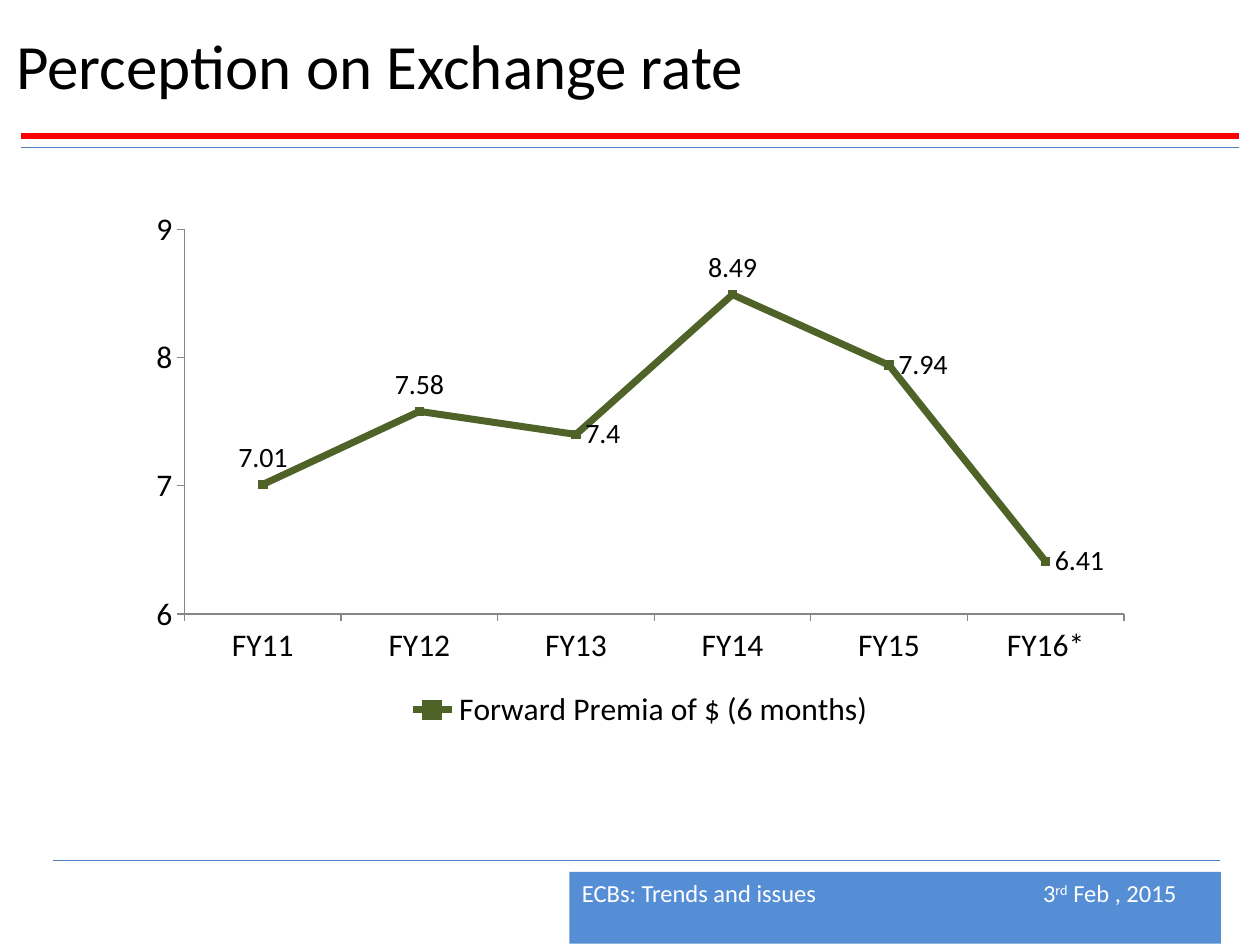
from typing import NamedTuple

from lxml.etree import SubElement
from pptx import Presentation
from pptx.chart.data import CategoryChartData
from pptx.dml.color import RGBColor
from pptx.enum.chart import (XL_CHART_TYPE, XL_LABEL_POSITION,
                             XL_LEGEND_POSITION, XL_MARKER_STYLE, XL_TICK_MARK)
from pptx.enum.shapes import MSO_CONNECTOR, MSO_SHAPE
from pptx.enum.text import MSO_ANCHOR, PP_ALIGN
from pptx.oxml.ns import qn
from pptx.util import Inches, Pt

WIDE, HIGH = Inches(10), Inches(7.5)
FACE = "Calibri"
GREEN, BLACK, WHITE, GREY = "4F6228", "000000", "FFFFFF", "868686"


class Rule(NamedTuple):
    """A level line, in percent of the slide's width and height."""
    left: float
    right: float
    top: float
    color: str
    weight: float


RULES = [
    Rule(1.7, 98.3, 14.4, "FF0000", 3),
    Rule(1.7, 98.3, 15.6, "4B7EBC", 0.75),
    Rule(4.2, 96.8, 91.07, "4B7EBC", 0.75),
]
RATES = {"FY11": 7.01, "FY12": 7.58, "FY13": 7.4,
         "FY14": 8.49, "FY15": 7.94, "FY16*": 6.41}
RAISED = (0, 1, 3)


def paint(color: str) -> RGBColor:
    """Turn a hex string into a colour."""
    return RGBColor.from_string(color)


def place(left: float, top: float, width: float, height: float) -> tuple:
    """Turn percent of the slide into a box of lengths."""
    return tuple(int(part * side / 100) for part, side in
                 zip((left, top, width, height), (WIDE, HIGH) * 2))


def style(font, size: float, color: str = BLACK) -> None:
    """Set the face, size and colour of a font."""
    font.name, font.size = FACE, Pt(size)
    font.color.rgb = paint(color)


def stroke(line, color: str, weight: float) -> None:
    """Set the colour and weight of a line."""
    line.color.rgb = paint(color)
    line.width = Pt(weight)


def add_rule(slide, rule: Rule) -> None:
    """Draw one level line."""
    x, y, end, base = place(rule.left, rule.top, rule.right, rule.top)
    line = slide.shapes.add_connector(MSO_CONNECTOR.STRAIGHT, x, y, end, base)
    stroke(line.line, rule.color, rule.weight)
    SubElement(line._element.spPr, qn("a:effectLst"))


def set_title(slide, text: str) -> None:
    """Place and format the title."""
    title = slide.shapes.title
    title.left, title.top, title.width, title.height = place(0.3, 0.4, 99.7, 12.9)
    stroke(title.line, WHITE, 0.75)
    title.text_frame.text = text
    title.text_frame.vertical_anchor = MSO_ANCHOR.MIDDLE
    para = title.text_frame.paragraphs[0]
    para.alignment = PP_ALIGN.LEFT
    style(para.font, 36)


def add_footer(slide) -> None:
    """Draw the footer band with its topic and date."""
    band = slide.shapes.add_shape(MSO_SHAPE.RECTANGLE, *place(45.2, 92.27, 51.7, 7.6))
    band.shadow.inherit = False
    band.fill.solid()
    band.fill.fore_color.rgb = paint("558ED5")
    band.line.fill.background()
    frame = band.text_frame
    frame.word_wrap = True
    frame.vertical_anchor = MSO_ANCHOR.TOP
    para = frame.paragraphs[0]
    para.alignment = PP_ALIGN.LEFT
    tabs = SubElement(para._p.get_or_add_pPr(), qn("a:tabLst"))
    SubElement(tabs, qn("a:tab"), pos=str(Inches(3.66)), algn="l")
    style(para.font, 14, WHITE)
    for text in ("ECBs: Trends and issues\t3", "rd", " Feb , 2015"):
        run = para.add_run()
        run.text = text
        if text == "rd":
            run.font._element.set("baseline", "30000")


def add_rates(slide) -> None:
    """Draw the line chart of forward premia."""
    data = CategoryChartData()
    data.categories = list(RATES)
    data.add_series("Forward Premia of $ (6 months)", list(RATES.values()))
    chart = slide.shapes.add_chart(
        XL_CHART_TYPE.LINE_MARKERS, *place(10.8, 21.1, 80, 56.7), data).chart
    style(chart.font, 18)
    chart.has_title = False
    chart.has_legend = True
    chart.legend.position = XL_LEGEND_POSITION.BOTTOM
    chart.legend.include_in_layout = False
    scale = chart.value_axis
    scale.minimum_scale, scale.maximum_scale, scale.major_unit = 6, 9, 1
    scale.has_major_gridlines = False
    for axis in (scale, chart.category_axis):
        axis.major_tick_mark = XL_TICK_MARK.OUTSIDE
        stroke(axis.format.line, GREY, 0.75)
    plot = chart.plots[0]
    plot.vary_by_categories = False
    series = plot.series[0]
    series.smooth = False
    stroke(series.format.line, GREEN, 4)
    mark = series.marker
    mark.style, mark.size = XL_MARKER_STYLE.SQUARE, 5
    mark.format.fill.solid()
    mark.format.fill.fore_color.rgb = paint(GREEN)
    stroke(mark.format.line, GREEN, 0.75)
    labels = series.data_labels
    labels.show_value = True
    labels.position = XL_LABEL_POSITION.RIGHT
    style(labels.font, 16)
    for index in RAISED:
        label = series.points[index].data_label
        style(label.font, 16)
        label.position = XL_LABEL_POSITION.ABOVE


def main() -> None:
    """Build and save the slide."""
    deck = Presentation()
    deck.slide_width, deck.slide_height = WIDE, HIGH
    slide = deck.slides.add_slide(deck.slide_layouts[5])
    add_footer(slide)
    for rule in RULES:
        add_rule(slide, rule)
    set_title(slide, "Perception on Exchange rate")
    add_rates(slide)
    deck.save("out.pptx")


if __name__ == "__main__":
    main()
